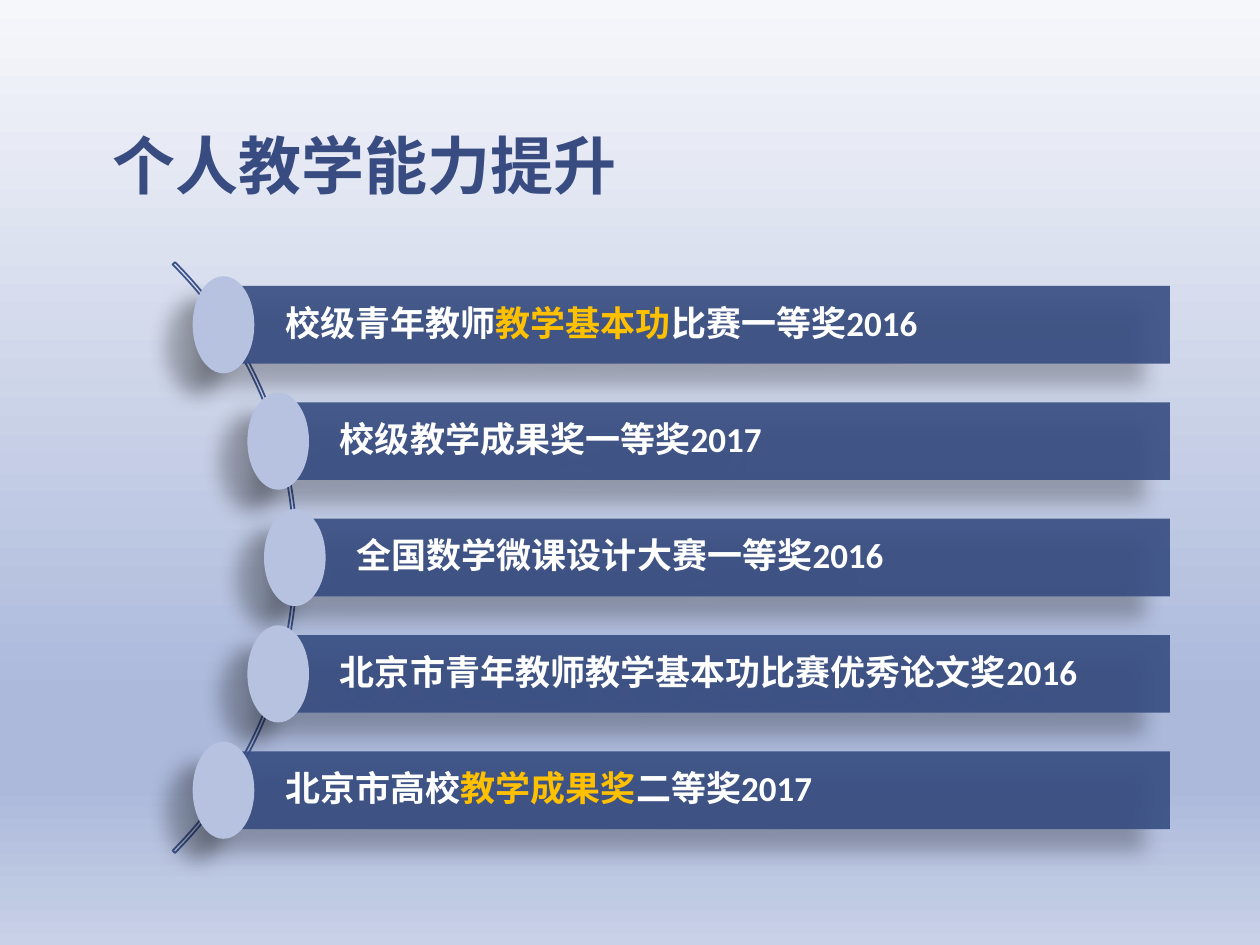
import math

from lxml import etree
from pptx import Presentation
from pptx import util as u
from pptx.dml.color import RGBColor
from pptx.enum import shapes, text
from pptx.oxml.ns import qn

TITLE = "个人教学能力提升"
AWARDS = [
    [("校级青年教师", False), ("教学基本功", True), ("比赛一等奖2016", False)],
    [("校级教学成果奖一等奖2017", False)],
    [("全国数学微课设计大赛一等奖2016", False)],
    [("北京市青年教师教学基本功比赛优秀论文奖2016", False)],
    [("北京市高校", False), ("教学成果奖", True), ("二等奖2017", False)],
]
BACKGROUND_STOPS = [(0, "F6F7FB"), (74, "ACB9DB"), (83, "ACB9DB"), (100, "C8D1E7")]

TITLE_BLUE = RGBColor(0x38, 0x4C, 0x81)
ARC_BLUE = RGBColor(0x3B, 0x52, 0x8A)
BAR_BLUE = RGBColor(0x37, 0x4D, 0x81)
DOT_BLUE = RGBColor(0xB6, 0xC2, 0xDF)
WHITE = RGBColor(0xFF, 0xFF, 0xFF)
GOLD = RGBColor(0xFF, 0xC0, 0x00)
LATIN_FONT = "Calibri"
CHINESE_FONT = "Noto Sans CJK SC"

ARC_X, ARC_Y, ARC_SIZE = -68.8, 318.6, 477.4
DOT_RADIUS = 237.3
PITCH = 66.5
BAR_RIGHT, BAR_HEIGHT = 668.5, 44.4
DOT_WIDTH, DOT_HEIGHT = 35.2, 55.5


def add_element(parent, tag, **attributes):
    return etree.SubElement(parent, qn(tag), **attributes)


def paint_background(page):
    fill = page.background.fill
    fill.gradient()
    fill.gradient_angle = 270
    stops = page.background._cSld.find(".//" + qn("a:gsLst"))
    for stop in list(stops):
        stops.remove(stop)
    for percent, color in BACKGROUND_STOPS:
        stop = add_element(stops, "a:gs", pos=str(percent * 1000))
        add_element(stop, "a:srgbClr", val=color)


def format_paragraph(para, size, font_name):
    para.alignment = text.PP_ALIGN.LEFT
    para.line_spacing = 0.9
    para.font.size = u.Pt(size)
    para.font.bold = True
    para.font.name = font_name
    defaults = para._p.pPr.find(qn("a:defRPr"))
    add_element(defaults, "a:ea", typeface=CHINESE_FONT)


def add_shape(page, kind, left, top, width, height):
    shape = page.shapes.add_shape(
        kind, u.Pt(left), u.Pt(top), u.Pt(width), u.Pt(height))
    shape.shadow.inherit = False
    return shape


def add_shadowed(page, kind, left, middle, width, height, color):
    shape = add_shape(page, kind, left, middle - height / 2, width, height)
    shape.fill.solid()
    shape.fill.fore_color.rgb = color
    shape.line.fill.background()
    effects = shape._element.spPr.find(qn("a:effectLst"))
    shadow = add_element(
        effects, "a:outerShdw", blurRad=str(u.Pt(11.8)), dist=str(u.Pt(19.7)),
        dir=str(141 * 60000), algn="ctr", rotWithShape="0")
    black = add_element(shadow, "a:srgbClr", val="000000")
    add_element(black, "a:alpha", val="28000")
    return shape


def add_title(page):
    title = page.shapes.title
    title.left, title.top = u.Pt(56.9), u.Pt(52.6)
    title.width, title.height = u.Pt(622), u.Pt(67)
    frame = title.text_frame
    frame.text = TITLE
    frame.auto_size = text.MSO_AUTO_SIZE.NONE
    frame.vertical_anchor = text.MSO_ANCHOR.BOTTOM
    para = frame.paragraphs[0]
    format_paragraph(para, 36, CHINESE_FONT)
    para.font.color.rgb = TITLE_BLUE


def add_arc(page):
    arc = add_shape(page, shapes.MSO_SHAPE.BLOCK_ARC, ARC_X - ARC_SIZE / 2,
                    ARC_Y - ARC_SIZE / 2, ARC_SIZE, ARC_SIZE)
    for index, value in enumerate((189, 27, 0.004)):
        arc.adjustments[index] = value
    arc.fill.background()
    arc.line.color.rgb = ARC_BLUE
    arc.line.width = u.Pt(1)


def add_award(page, offset, parts):
    middle = ARC_Y + offset
    left = ARC_X + math.sqrt(DOT_RADIUS ** 2 - offset ** 2)
    bar = add_shadowed(page, shapes.MSO_SHAPE.RECTANGLE, left, middle,
                       BAR_RIGHT - left, BAR_HEIGHT, BAR_BLUE)
    bar_color = bar._element.spPr.find(qn("a:solidFill"))[0]
    add_element(bar_color, "a:alpha", val="90000")

    frame = bar.text_frame
    frame.word_wrap = True
    frame.vertical_anchor = text.MSO_ANCHOR.MIDDLE
    frame.margin_left = u.Pt(35.3)
    frame.margin_top = frame.margin_right = frame.margin_bottom = u.Pt(4)
    para = frame.paragraphs[0]
    format_paragraph(para, 20, LATIN_FONT)
    for words, highlighted in parts:
        span = para.add_run()
        span.text = words
        span.font.color.rgb = GOLD if highlighted else WHITE

    add_shadowed(page, shapes.MSO_SHAPE.OVAL, left - DOT_WIDTH / 2, middle,
                 DOT_WIDTH, DOT_HEIGHT, DOT_BLUE)


def main():
    deck = Presentation()
    deck.slide_width, deck.slide_height = u.Pt(720), u.Pt(540)
    page = deck.slides.add_slide(deck.slide_layouts[5])
    paint_background(page)
    add_title(page)
    add_arc(page)
    for index, parts in enumerate(AWARDS):
        add_award(page, (index - (len(AWARDS) - 1) / 2) * PITCH, parts)
    deck.save("out.pptx")


if __name__ == "__main__":
    main()
